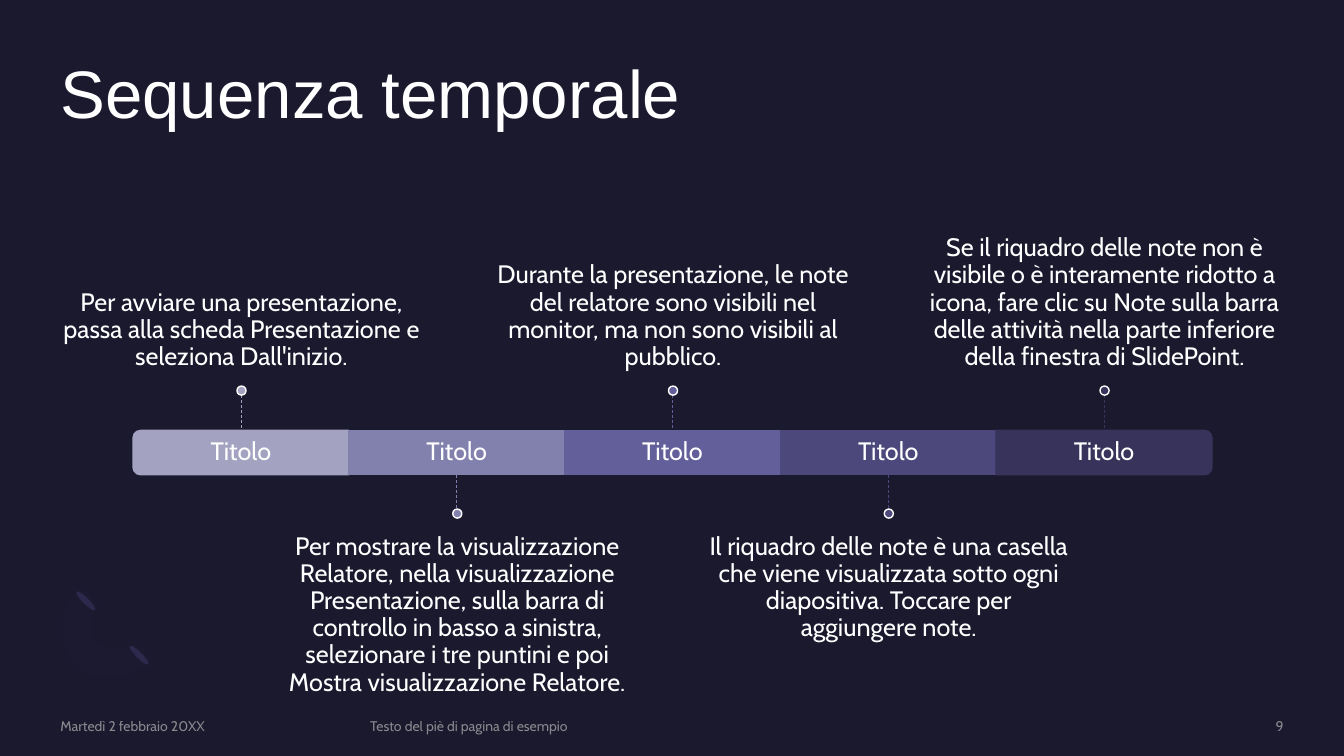
from dataclasses import dataclass
from lxml.etree import SubElement
from pptx import Presentation
from pptx.dml.color import RGBColor
from pptx.enum.dml import MSO_LINE
from pptx.enum.shapes import MSO_CONNECTOR, MSO_SHAPE
from pptx.enum.text import MSO_ANCHOR, PP_ALIGN
from pptx.oxml.ns import qn
from pptx.util import Pt

PX = 9144


@dataclass(frozen=True)
class Theme:
    back: str = "1B192E"
    text: str = "FFFFFF"
    muted: str = "A6A6A6"
    petal: str = "2C284A"
    ring: str = "7771B2"
    steps: tuple = ("A3A3C1", "8281AE", "625F9A", "4C487B", "37335B")
    head: str = "Arial"
    body: str = "Cabin"
    title: int = 48
    copy: int = 18
    small: int = 10


THEME = Theme()
STEPS = (
    "Per avviare una presentazione, passa alla scheda Presentazione e seleziona Dall'inizio.",
    "Per mostrare la visualizzazione Relatore, nella visualizzazione Presentazione, "
    "sulla barra di controllo in basso a sinistra, selezionare i tre puntini e poi "
    "Mostra visualizzazione Relatore.",
    "Durante la presentazione, le note del relatore sono visibili nel monitor, "
    "ma non sono visibili al pubblico.",
    "Il riquadro delle note è una casella che viene visualizzata sotto ogni "
    "diapositiva. Toccare per aggiungere note.",
    "Se il riquadro delle note non è visibile o è interamente ridotto a icona, "
    "fare clic su Note sulla barra delle attività nella parte inferiore della "
    "finestra di SlidePoint.",
)


def color(code):
    return RGBColor.from_string(code)


def fade(node, share):
    for fill in node.iter(qn("a:srgbClr")):
        SubElement(fill, qn("a:alpha")).set("val", str(share * 1000))


def write(slide, box, text, size, face=THEME.body, tint=THEME.text,
          align=PP_ALIGN.LEFT, anchor=MSO_ANCHOR.TOP, pad=(0, 0), lead=0.9):
    frame = slide.shapes.add_textbox(*(n * PX for n in box)).text_frame
    frame.word_wrap = True
    frame.margin_left = frame.margin_right = 0
    frame.margin_top, frame.margin_bottom = (n * PX for n in pad)
    frame.vertical_anchor = anchor
    para = frame.paragraphs[0]
    para.text = text
    para.alignment = align
    para.line_spacing = lead
    para.font.name = face
    para.font.size = Pt(size)
    para.font.color.rgb = color(tint)
    return para


def draw(slide, kind, box, tint, edge=None, turn=0):
    shape = slide.shapes.add_shape(kind, *(n * PX for n in box))
    shape.shadow.inherit = False
    shape.rotation = turn
    shape.fill.solid()
    shape.fill.fore_color.rgb = color(tint)
    if edge:
        shape.line.color.rgb = color(edge)
        shape.line.width = Pt(1)
    else:
        shape.line.fill.background()
    return shape


def link(slide, x, top, end, tint):
    line = slide.shapes.add_connector(
        MSO_CONNECTOR.STRAIGHT, x * PX, top * PX, x * PX, end * PX)
    line.line.color.rgb = color(tint)
    line.line.width = Pt(0.5)
    line.line.dash_style = MSO_LINE.DASH
    SubElement(line._element.spPr, qn("a:effectLst"))


def curve(knots, count=12):
    for step in range(count + 1):
        t = step / count
        parts = ((1 - t) ** 3, 3 * t * (1 - t) ** 2, 3 * t * t * (1 - t), t ** 3)
        yield tuple(sum(w * k[axis] for w, k in zip(parts, knots)) for axis in (0, 1))


def decor(slide, box):
    x, y = box[:2]
    for dx, dy in ((79, 55), (26, 1)):
        draw(slide, MSO_SHAPE.OVAL, (x + dx, y + dy, 6, 26), THEME.petal, turn=135)
    arcs = (
        ((20, 77), (0, 57), (2, 23), (25, 0)),
        ((43, 18), (31, 29), (30, 47), (40, 56)),
        ((40, 56), (50, 66), (67, 65), (79, 54)),
        ((96, 72), (74, 94), (39, 97), (20, 77)),
    )
    spots = [(x + dx, y + dy) for arc in arcs for dx, dy in curve(arc)]
    path = slide.shapes.build_freeform(*spots[0], scale=PX)
    path.add_line_segments(spots[1:], close=True)
    ring = path.convert_to_shape()
    ring.shadow.inherit = False
    ring.fill.solid()
    ring.fill.fore_color.rgb = color(THEME.ring)
    ring.line.fill.background()
    fade(ring._element.spPr, 2)


def bar(slide, box, tint, turn):
    x, y, wide, high = box
    if turn:
        left, top = x + (wide - high) // 2, y - (wide - high) // 2
        draw(slide, MSO_SHAPE.ROUND_2_SAME_RECTANGLE,
             (left, top, high, wide), tint, tint, turn)
    else:
        draw(slide, MSO_SHAPE.RECTANGLE, box, tint, tint)
    write(slide, box, "Titolo", THEME.copy,
          align=PP_ALIGN.CENTER, anchor=MSO_ANCHOR.MIDDLE)


def note(slide, box, text, tint, above):
    x, y, wide, high = box
    mid = x + wide // 2
    if above:
        area, pad, anchor = y - 196, (0, 15), MSO_ANCHOR.BOTTOM
        dot, top, end = y - 44, y - 35, y
    else:
        area, pad, anchor = y + high + 43, (15, 0), MSO_ANCHOR.TOP
        dot, top, end = y + high + 34, y + high, y + high + 34
    write(slide, (mid - 178, area, 357, 152), text, THEME.copy,
          align=PP_ALIGN.CENTER, anchor=anchor, pad=pad)
    link(slide, mid, top, end, tint)
    draw(slide, MSO_SHAPE.OVAL, (mid - 4, dot, 9, 9), tint, THEME.text)


def timeline(slide, box):
    x, y, wide, high = box
    step = wide // len(STEPS)
    turns = {0: 270, len(STEPS) - 1: 90}
    for i, (text, tint) in enumerate(zip(STEPS, THEME.steps)):
        cell = (x + i * step, y, step, high)
        bar(slide, cell, tint, turns.get(i, 0))
        note(slide, cell, text, tint, i % 2 == 0)


def footer(slide, box):
    x, y, wide, high = box
    parts = (
        (0, 288, "Martedì 2 febbraio 20XX", PP_ALIGN.LEFT),
        (307, 698, "Testo del piè di pagina di esempio", PP_ALIGN.LEFT),
        (wide - 185, 185, "9", PP_ALIGN.RIGHT),
    )
    for dx, span, text, align in parts:
        para = write(slide, (x + dx, y, span, high), text, THEME.small,
                     tint=THEME.muted, align=align, anchor=MSO_ANCHOR.MIDDLE, lead=1.0)
        fade(para._p, 80)


def main():
    deck = Presentation()
    deck.slide_width, deck.slide_height = 1333 * PX, 750 * PX
    slide = deck.slides.add_slide(deck.slide_layouts[6])
    slide.background.fill.solid()
    slide.background.fill.fore_color.rgb = color(THEME.back)
    decor(slide, (56, 582, 96, 97))
    write(slide, (60, 60, 1213, 146), "Sequenza temporale", THEME.title, THEME.head)
    timeline(slide, (132, 427, 1070, 44))
    footer(slide, (60, 712, 1213, 17))
    deck.save("out.pptx")


if __name__ == "__main__":
    main()
